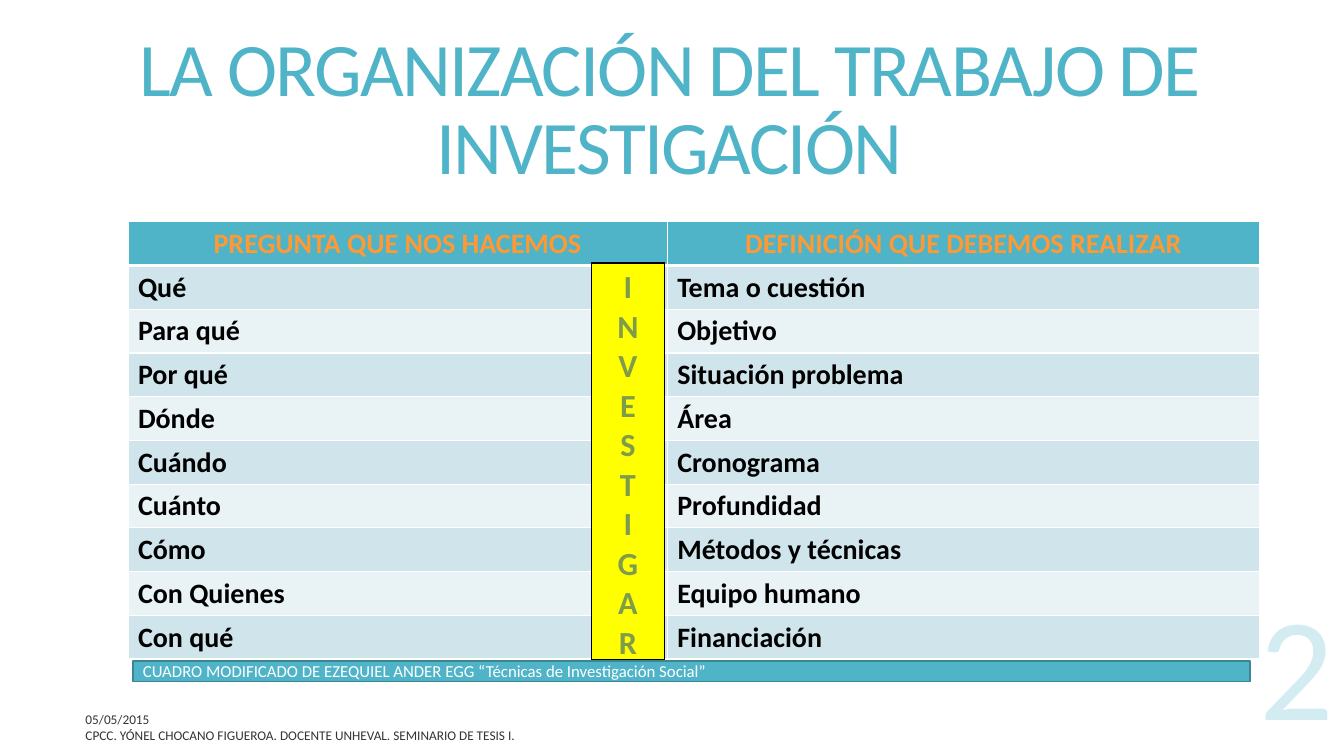
from lxml.etree import SubElement
from pptx import Presentation
from pptx.dml.color import RGBColor as RGB
from pptx.enum.shapes import MSO_SHAPE as SHAPE
from pptx.enum.text import MSO_ANCHOR as ANCHOR, PP_ALIGN as ALIGN
from pptx.oxml import parse_xml
from pptx.oxml.ns import nsdecls, qn
from pptx.util import Pt

TITLE = "LA ORGANIZACIÓN DEL TRABAJO DE INVESTIGACIÓN"
QUESTIONS = [
    ("PREGUNTA QUE NOS HACEMOS", "DEFINICIÓN QUE DEBEMOS REALIZAR"),
    ("Qué", "Tema o cuestión"),
    ("Para qué", "Objetivo"),
    ("Por qué", "Situación problema"),
    ("Dónde", "Área"),
    ("Cuándo", "Cronograma"),
    ("Cuánto", "Profundidad"),
    ("Cómo", "Métodos y técnicas"),
    ("Con Quienes", "Equipo humano"),
    ("Con qué", "Financiación"),
]
VERB = "INVESTIGAR"
CREDIT = "CUADRO MODIFICADO DE EZEQUIEL ANDER EGG “Técnicas de Investigación Social”"
FOOTERS = [
    ("05/05/2015", (54, 504.7, 324, 18)),
    ("CPCC. YÓNEL CHOCANO FIGUEROA. DOCENTE UNHEVAL. SEMINARIO DE TESIS I.",
     (54, 516.2, 396, 18)),
]
PAGE = "2"

COLORS = {
    "teal": "50B4C8", "teal_edge": "3B8594", "teal_pale": "D3ECF1",
    "orange": "FF9933", "band_dark": "D0E5EB", "band_light": "E9F2F5",
    "yellow": "FFFF00", "green": "7E9C4C", "black": "000000", "white": "FFFFFF",
}
FONT = "Calibri"


def color(name):
    return RGB.from_string(COLORS[name])


def write(frame, lines, size, ink, bold=False, align=ALIGN.LEFT):
    """Fill a text frame, one paragraph per line, and return its runs."""
    runs = []
    for i, line in enumerate(lines):
        para = frame.add_paragraph() if i else frame.paragraphs[0]
        para.alignment = align
        run = para.add_run()
        run.text = line
        for key, value in {"name": FONT, "size": Pt(size), "bold": bold}.items():
            setattr(run.font, key, value)
        run.font.color.rgb = color(ink)
        runs.append(run)
    return runs


def add_label(box, text, size, ink, align=ALIGN.LEFT, anchor=ANCHOR.MIDDLE):
    frame = slide.shapes.add_textbox(*map(Pt, box)).text_frame
    frame.word_wrap = True
    frame.vertical_anchor = anchor
    return frame, write(frame, [text], size, ink, align=align)[0]


def add_plain_table(left, top, widths, row_height, rows):
    table = slide.shapes.add_table(
        rows, len(widths), Pt(left), Pt(top), Pt(sum(widths)), Pt(row_height * rows)).table
    table.first_row = table.horz_banding = False
    for column, width in zip(table.columns, widths):
        column.width = Pt(width)
    return table


def paint(cell, fill, edge, top=1, bottom=1):
    cell.fill.solid()
    cell.fill.fore_color.rgb = color(fill)
    props = cell._tc.get_or_add_tcPr()
    for i, (side, width) in enumerate(zip("LRTB", (1, 1, top, bottom))):
        props.insert(i, parse_xml(
            f'<a:ln{side} {nsdecls("a")} w="{Pt(width)}"><a:solidFill>'
            f'<a:srgbClr val="{COLORS[edge]}"/></a:solidFill></a:ln{side}>'))


deck = Presentation()
deck.slide_width, deck.slide_height = Pt(960), Pt(540)
slide = deck.slides.add_slide(deck.slide_layouts[6])

title_frame, title_run = add_label((54, 15.1, 848.2, 130.3), TITLE, 54, "teal", ALIGN.CENTER)
title_frame.paragraphs[0].line_spacing = 0.85
title_run._r.get_or_add_rPr().set("spc", "-120")

questions = add_plain_table(91.4, 158.4, (385.2, 423.4), 29.5, len(QUESTIONS))
for r, pair in enumerate(QUESTIONS):
    header = r == 0
    fill = "teal" if header else "band_dark" if r % 2 else "band_light"
    for c, text in enumerate(pair):
        cell = questions.cell(r, c)
        write(cell.text_frame, [text], 20, "orange" if header else "black", True,
              ALIGN.CENTER if header else ALIGN.LEFT)
        paint(cell, fill, "white", top=3 if r == 1 else 1, bottom=3 if header else 1)

for text, box in FOOTERS:
    _, run = add_label(box, text, 9.5, "black")
    tint = run._r.rPr.find(".//" + qn("a:srgbClr"))
    SubElement(tint, qn("a:alpha")).set("val", "80000")

verb_cell = add_plain_table(422.6, 187.9, (51.8,), 283, 1).cell(0, 0)
write(verb_cell.text_frame, VERB, 23, "green", True, ALIGN.CENTER)
paint(verb_cell, "yellow", "black")

credit = slide.shapes.add_shape(SHAPE.RECTANGLE, Pt(95), Pt(472.3), Pt(797.8), Pt(14.4))
credit.shadow.inherit = False
credit.fill.solid()
credit.fill.fore_color.rgb = color("teal")
credit.line.color.rgb = color("teal_edge")
credit.line.width = Pt(1)
credit.text_frame.word_wrap = True
credit.text_frame.vertical_anchor = ANCHOR.MIDDLE
write(credit.text_frame, [CREDIT], 12, "white")

page_frame, _ = add_label((894, 409.5, 64, 128), PAGE, 105, "teal_pale",
                          ALIGN.CENTER, ANCHOR.TOP)
for side in ("left", "right", "top", "bottom"):
    setattr(page_frame, f"margin_{side}", 0)

deck.save("out.pptx")
